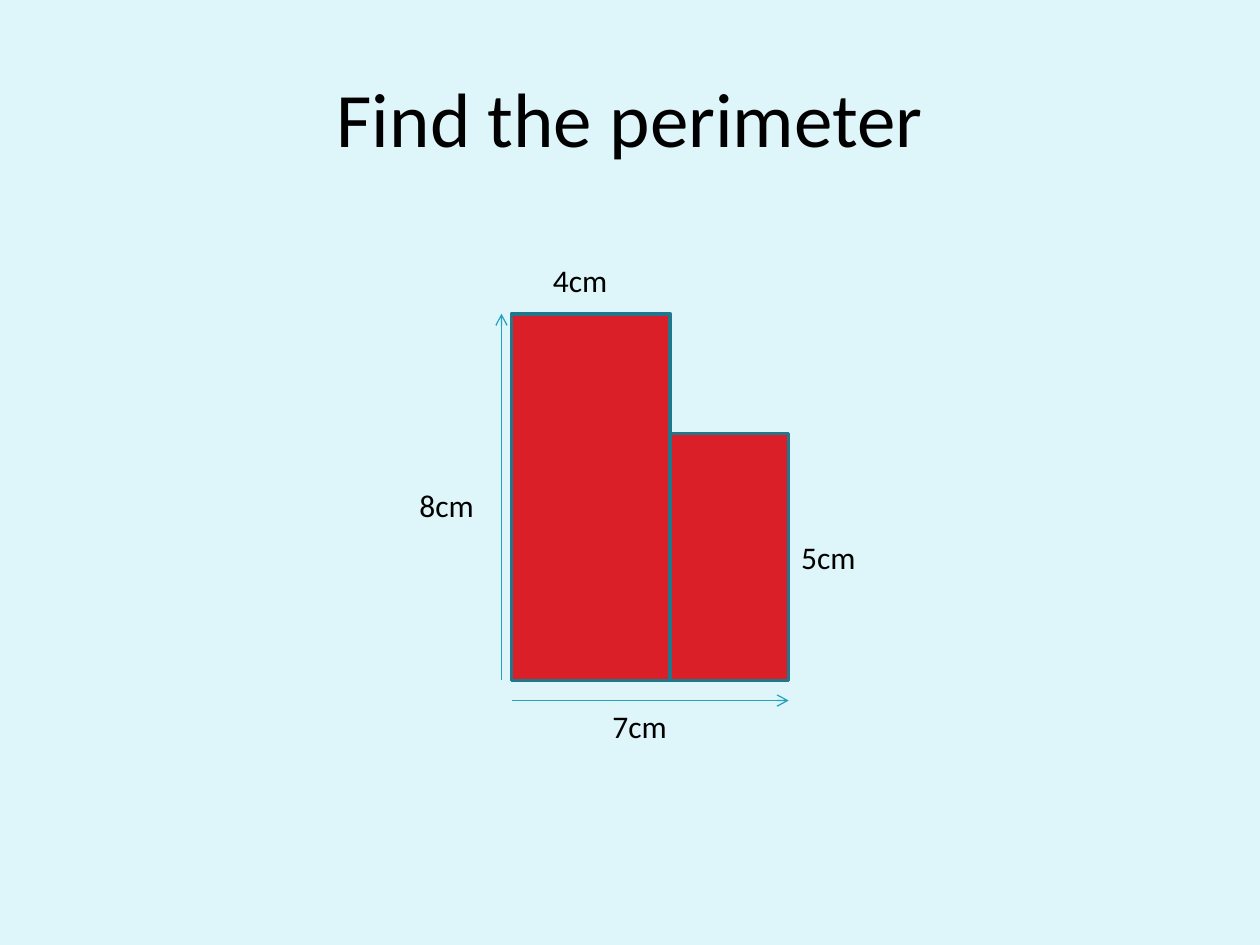
"""Build a slide that asks for the perimeter of an L-shaped figure."""
from typing import NamedTuple

from lxml import etree
from pptx import Presentation
from pptx.dml.color import RGBColor
from pptx.enum.shapes import MSO_CONNECTOR, MSO_SHAPE
from pptx.enum.text import MSO_ANCHOR, MSO_AUTO_SIZE, PP_ALIGN
from pptx.oxml.ns import qn
from pptx.util import Inches, Pt

RECT = MSO_SHAPE.RECTANGLE
LINE = MSO_CONNECTOR.STRAIGHT
GROW = MSO_AUTO_SIZE.SHAPE_TO_FIT_TEXT
MIDDLE = MSO_ANCHOR.MIDDLE
CENTER = PP_ALIGN.CENTER

COLS, ROWS = 100, 75
CELL = 0.1
FONT = "Calibri"
SKY, RED, EDGE, TEAL, BLACK = "DEF5FA", "DA1F28", "21788D", "28A1BE", "000000"
LEFT, STEP, RIGHT = 40.6, 53.2, 62.6
TOP, SHELF, BASE = 24.9, 34.4, 54


class Block(NamedTuple):
    left: float
    top: float
    right: float
    base: float


class Label(NamedTuple):
    text: str
    col: float
    row: float
    wide: float
    inset: float = 1


class Arrow(NamedTuple):
    col: float
    row: float
    to_col: float
    to_row: float


BLOCKS = [Block(LEFT, TOP, STEP, BASE), Block(STEP, SHELF, RIGHT, BASE)]
ARROWS = [Arrow(LEFT, 55.6, RIGHT, 55.6), Arrow(39.8, BASE, 39.8, TOP)]
LABELS = [
    Label("4cm", 42.9, 20.2, 7.1),
    Label("7cm", 46.5, 55.6, 9.8, 2.1),
    Label("5cm", RIGHT, 42.2, 8.7),
    Label("8cm", 32.3, 38.1, 7.9),
]


def grid(count: float) -> int:
    """Turn a count of grid cells into a length."""
    return Inches(count * CELL)


def paint(color, code: str) -> None:
    """Set a colour from a hex string."""
    color.rgb = RGBColor.from_string(code)


def write(para, text: str, size: float) -> None:
    """Add one run of text to a paragraph."""
    run = para.add_run()
    run.text = text
    run.font.name = FONT
    run.font.size = Pt(size)
    paint(run.font.color, BLACK)


def stroke(line, code: str, width: float) -> None:
    """Set the colour and width of a line."""
    paint(line.color, code)
    line.width = Pt(width)


def draw_title(shape, text: str) -> None:
    """Place and fill the title."""
    shape.left, shape.top = grid(5), grid(3)
    shape.width, shape.height = grid(90), grid(12.5)
    frame = shape.text_frame
    frame.vertical_anchor = MIDDLE
    para = frame.paragraphs[0]
    para.alignment = CENTER
    write(para, text, 44)


def draw_block(shapes, block: Block) -> None:
    """Draw one filled part of the figure."""
    shape = shapes.add_shape(
        RECT, grid(block.left), grid(block.top),
        grid(block.right - block.left), grid(block.base - block.top))
    shape.shadow.inherit = False
    shape.fill.solid()
    paint(shape.fill.fore_color, RED)
    stroke(shape.line, EDGE, 2)


def draw_arrow(shapes, arrow: Arrow) -> None:
    """Draw one measuring arrow."""
    shape = shapes.add_connector(LINE, *map(grid, arrow))
    stroke(shape.line, TEAL, 0.75)
    props = shape._element.spPr
    tip = etree.SubElement(props.find(qn("a:ln")), qn("a:tailEnd"))
    tip.set("type", "arrow")
    etree.SubElement(props, qn("a:effectLst"))


def draw_label(shapes, label: Label) -> None:
    """Write one length beside its side."""
    box = shapes.add_textbox(
        grid(label.col), grid(label.row), grid(label.wide), grid(4))
    frame = box.text_frame
    frame.word_wrap = True
    frame.auto_size = GROW
    frame.margin_left = grid(label.inset)
    write(frame.paragraphs[0], label.text, 18)


def main() -> None:
    """Build and save the slide."""
    deck = Presentation()
    deck.slide_width, deck.slide_height = grid(COLS), grid(ROWS)
    slide = deck.slides.add_slide(deck.slide_layouts[5])
    fill = slide.background.fill
    fill.solid()
    paint(fill.fore_color, SKY)
    shapes = slide.shapes
    draw_title(shapes.title, "Find the perimeter")
    for block in BLOCKS:
        draw_block(shapes, block)
    for arrow in ARROWS:
        draw_arrow(shapes, arrow)
    for label in LABELS:
        draw_label(shapes, label)
    deck.save("out.pptx")


if __name__ == "__main__":
    main()
